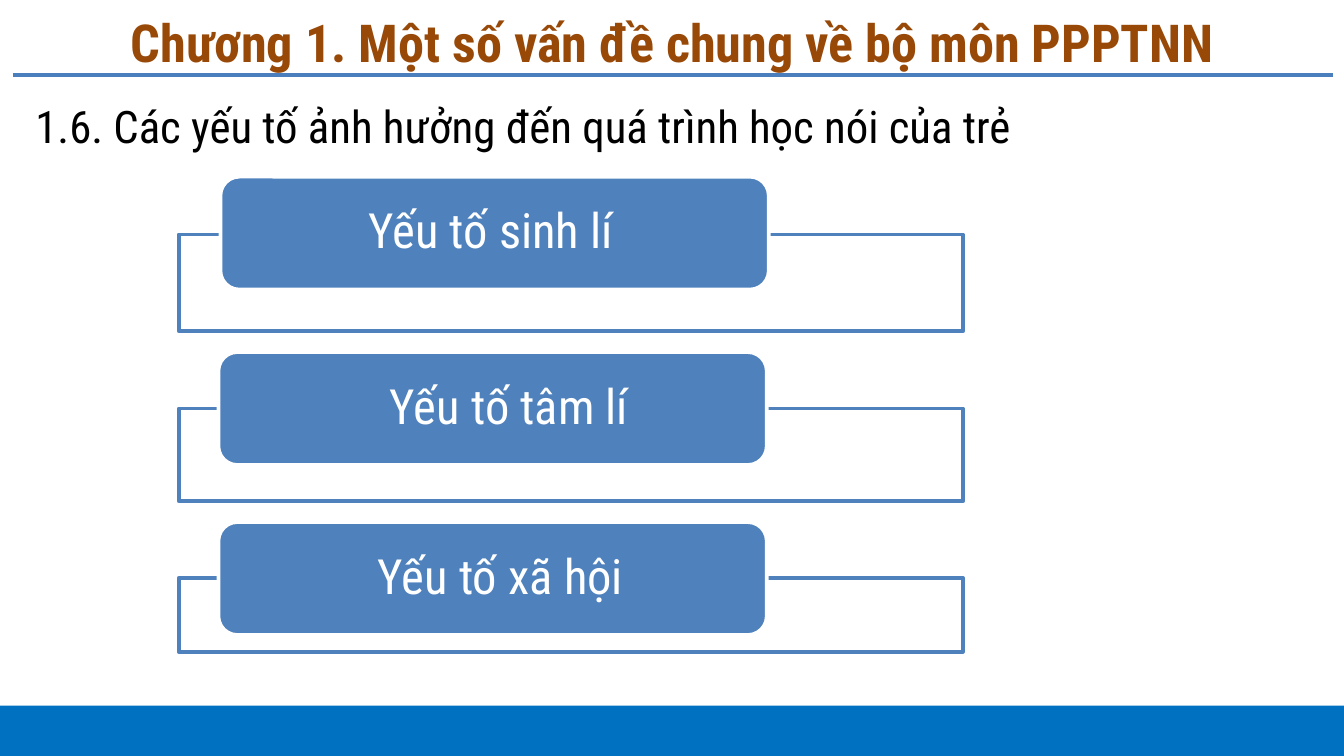
"""Build the slide on factors that influence how children learn to speak."""
from dataclasses import dataclass

from lxml import etree
from pptx import Presentation
from pptx import util as u
from pptx.dml.color import RGBColor
from pptx.enum import shapes, text
from pptx.oxml.ns import qn

COLUMNS, ROWS = 100, 56.25
CELL = u.Inches(0.1)


@dataclass(frozen=True)
class Theme:
    """Colours, type sizes and line width of the slide."""
    font: str = "Roboto Condensed"
    white: str = "FFFFFF"
    black: str = "000000"
    heading: str = "984807"
    accent: str = "4F81BD"
    rule: str = "4B7EBC"
    footer: str = "0070C0"
    heading_size: int = 28
    body_size: int = 24
    label_size: int = 26
    line: int = 2


@dataclass(frozen=True)
class Box:
    """A rectangle in grid columns and rows."""
    left: float
    top: float
    width: float
    height: float

    def emu(self) -> list[int]:
        """Return the position and size in slide units."""
        return [grid(v) for v in (self.left, self.top, self.width, self.height)]


@dataclass(frozen=True)
class Factor:
    """A labelled factor with its frame and label placement."""
    label: str
    frame_top: float
    frame_height: float
    label_left: float
    label_top: float
    indent: float


THEME = Theme()
FACTORS = (
    Factor("Yếu tố sinh lí", 17.45, 7.2, 16.4, 13.15, 10.6),
    Factor("Yếu tố tâm lí", 30.4, 6.9, 16.25, 26.2, 12.35),
    Factor("Yếu tố xã hội", 43, 5.5, 16.25, 38.85, 11.45),
)


def grid(cells: float) -> int:
    """Convert grid cells to slide units."""
    return u.Emu(round(cells * CELL))


def rgb(color: str) -> RGBColor:
    """Convert a hex string to a colour."""
    return RGBColor.from_string(color)


def write(tf, words: str, size: int, color: str, align, anchor, bold: bool = False):
    """Fill a text frame with one run and return its paragraph."""
    tf.word_wrap = True
    tf.vertical_anchor = anchor
    p = tf.paragraphs[0]
    p.alignment = align
    r = p.add_run()
    r.text = words
    r.font.name = THEME.font
    r.font.size = u.Pt(size)
    r.font.bold = bold
    r.font.color.rgb = rgb(color)
    return p


def add_box(s, kind, box: Box, fill: str, line: str | None = None):
    """Add a filled shape with an optional outline."""
    sp = s.shapes.add_shape(kind, *box.emu())
    sp.shadow.inherit = False
    sp.fill.solid()
    sp.fill.fore_color.rgb = rgb(fill)
    if line:
        sp.line.color.rgb = rgb(line)
        sp.line.width = u.Pt(THEME.line)
    else:
        sp.line.fill.background()
    return sp


def add_rule(s, left: float, right: float, row: float) -> None:
    """Add the horizontal rule below the heading."""
    rule = s.shapes.add_connector(
        shapes.MSO_CONNECTOR.STRAIGHT, grid(left), grid(row), grid(right), grid(row))
    rule.line.color.rgb = rgb(THEME.rule)
    rule.line.width = u.Pt(THEME.line)
    etree.SubElement(rule._element.spPr, qn("a:effectLst"))


def add_factor(s, factor: Factor) -> None:
    """Add an outlined frame with a rounded label over its top edge."""
    frame = Box(13.3, factor.frame_top, 58.35, factor.frame_height)
    add_box(s, shapes.MSO_SHAPE.RECTANGLE, frame, THEME.white, THEME.accent)
    label = Box(factor.label_left, factor.label_top, 40.8, 8.4)
    sp = add_box(s, shapes.MSO_SHAPE.ROUNDED_RECTANGLE, label, THEME.accent, THEME.white)
    tf = sp.text_frame
    tf.margin_left = grid(factor.indent)
    tf.margin_right = tf.margin_top = tf.margin_bottom = 0
    p = write(tf, factor.label, THEME.label_size, THEME.white,
              text.PP_ALIGN.LEFT, text.MSO_ANCHOR.MIDDLE)
    p.line_spacing = 0.9


def main() -> None:
    """Build and save the slide."""
    prs = Presentation()
    prs.slide_width, prs.slide_height = grid(COLUMNS), grid(ROWS)
    s = prs.slides.add_slide(prs.slide_layouts[6])
    add_box(s, shapes.MSO_SHAPE.RECTANGLE, Box(-0.4, 52.5, 100.8, 3.75), THEME.footer)
    add_rule(s, 0.95, 99.2, 5.6)

    heading = s.shapes.add_textbox(*Box(1.65, 0.55, 96.7, 5.1).emu())
    write(heading.text_frame, "Chương 1. Một số vấn đề chung về bộ môn PPPTNN",
          THEME.heading_size, THEME.heading, text.PP_ALIGN.CENTER,
          text.MSO_ANCHOR.MIDDLE, bold=True)

    body = s.shapes.add_textbox(*Box(1.65, 6.45, 96.7, 44.5).emu())
    p = write(body.text_frame, "1.6. Các yếu tố ảnh hưởng đến quá trình học nói của trẻ",
              THEME.body_size, THEME.black, text.PP_ALIGN.JUSTIFY, text.MSO_ANCHOR.TOP)
    p.line_spacing = 1.1
    p.space_before = u.Pt(6)

    for factor in FACTORS:
        add_factor(s, factor)
    prs.save("out.pptx")


if __name__ == "__main__":
    main()
